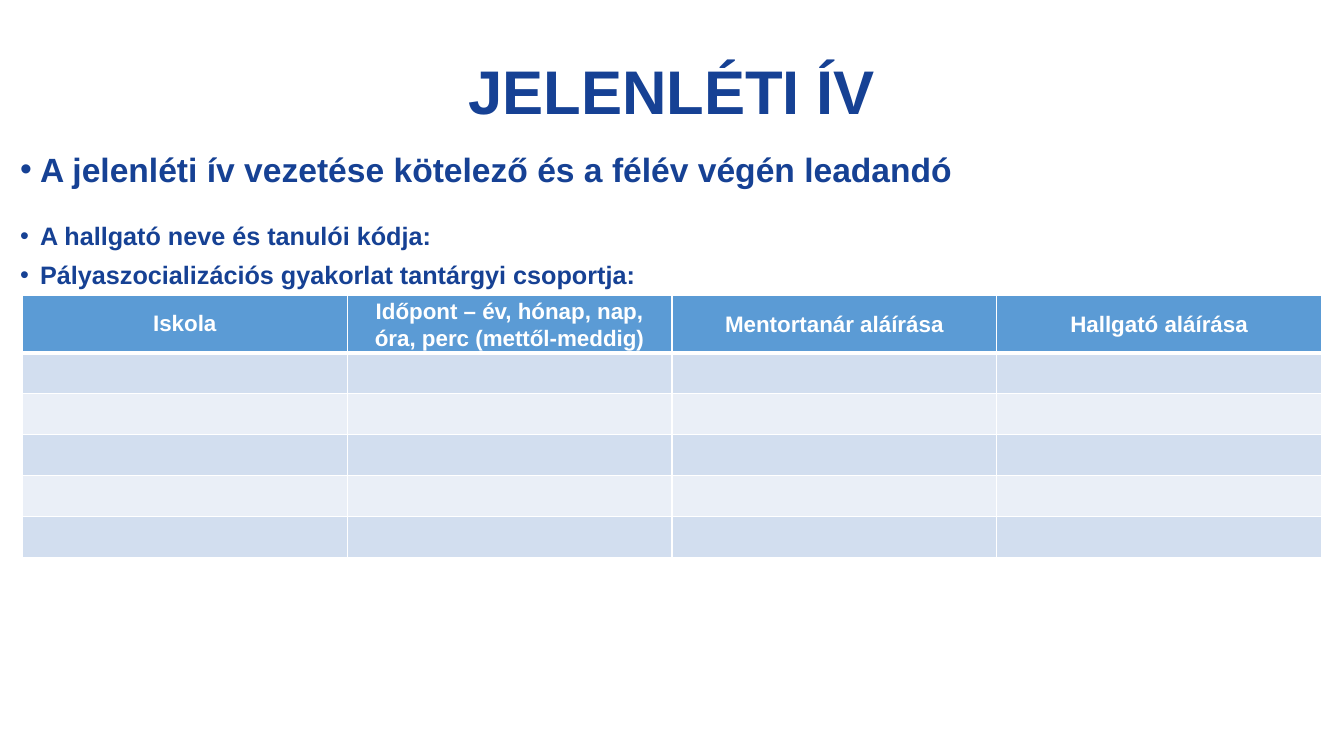
"""Build the attendance sheet slide with its heading, notes and sign-in table."""
from lxml.etree import SubElement
from pptx import Presentation
from pptx.dml.color import RGBColor
from pptx.enum.text import MSO_ANCHOR as Anchor, PP_ALIGN as Align
from pptx.oxml.ns import qn
from pptx.util import Pt

COLORS = {"navy": "164194", "header": "5B9BD5", "odd": "D2DEEF", "even": "EAEFF7", "white": "FFFFFF"}
HEADERS = ["Iskola", "Időpont – év, hónap, nap, óra, perc (mettől-meddig)",
           "Mentortanár aláírása", "Hallgató aláírása"]
NOTES = [
    (103, 36, 24, ["A jelenléti ív vezetése kötelező és a félév végén leadandó"]),
    (154, 57, 18, ["A hallgató neve és tanulói kódja:",
                   "Pályaszocializációs gyakorlat tantárgyi csoportja:"]),
]
PAGE_WIDTH = 960
BODY_ROWS = 5


def style(para, size, color):
    for span in para.runs:
        span.font.name = "Arial"
        span.font.size = Pt(size)
        span.font.bold = True
        span.font.color.rgb = RGBColor.from_string(COLORS[color])


def set_borders(cell, bottom, top):
    for side, width in (("L", 1), ("R", 1), ("T", top), ("B", bottom)):
        line = SubElement(cell._tc.get_or_add_tcPr(), qn(f"a:ln{side}"), w=str(Pt(width)))
        SubElement(SubElement(line, qn("a:solidFill")), qn("a:srgbClr"), val=COLORS["white"])


deck = Presentation()
deck.slide_width, deck.slide_height = Pt(PAGE_WIDTH), Pt(540)
page = deck.slides.add_slide(deck.slide_layouts[6])

title = page.shapes.add_textbox(0, Pt(32.4), Pt(PAGE_WIDTH), Pt(70.6)).text_frame
title.word_wrap = True
title.vertical_anchor = Anchor.MIDDLE
title.margin_left = 0
title.text = "JELENLÉTI ÍV"
heading = title.paragraphs[0]
heading.alignment = Align.CENTER
heading.line_spacing = 0.9
heading._p.get_or_add_pPr().set("indent", str(Pt(7.2)))
style(heading, 44, "navy")

for top, height, size, lines in NOTES:
    box = page.shapes.add_textbox(0, Pt(top), Pt(PAGE_WIDTH), Pt(height)).text_frame
    box.word_wrap = True
    box.text = "\n".join(lines)
    for para in box.paragraphs:
        para.space_after = Pt(6)
        properties = para._p.get_or_add_pPr()
        properties.set("marL", str(Pt(21.6)))
        properties.set("indent", str(Pt(-14.4)))
        SubElement(properties, qn("a:buFont"), typeface="Arial")
        SubElement(properties, qn("a:buChar"), char="•")
        style(para, size, "navy")

table = page.shapes.add_table(BODY_ROWS + 1, len(HEADERS), Pt(16), Pt(211),
                              Pt(928), Pt(186.6)).table
for index, row in enumerate(table.rows):
    row.height = Pt(29.2 if index else 40.6)
    fill = ("even", "odd")[index % 2] if index else "header"
    for cell in row.cells:
        set_borders(cell, bottom=1 if index else 3, top=3 if index == 1 else 1)
        cell.fill.solid()
        cell.fill.fore_color.rgb = RGBColor.from_string(COLORS[fill])

for column, label in enumerate(HEADERS):
    cell = table.cell(0, column)
    cell.text = label
    cell.vertical_anchor = Anchor.MIDDLE
    para = cell.text_frame.paragraphs[0]
    para.alignment = Align.CENTER
    style(para, 16, "white")
    if column:
        cell.margin_left = cell.margin_right = Pt(5)
        cell.margin_top = cell.margin_bottom = 0
        para.line_spacing = 1.07

deck.save("out.pptx")
